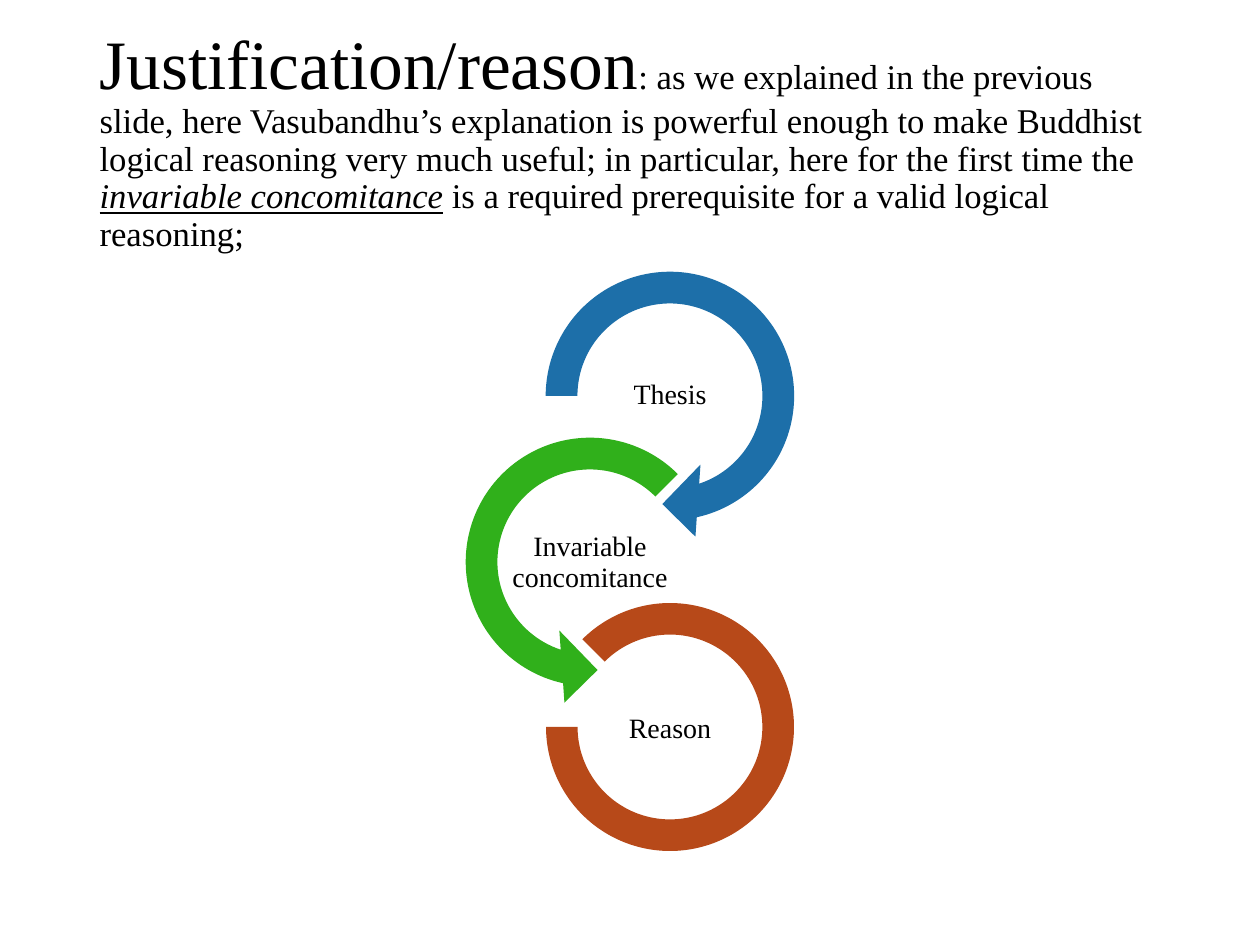
"""Build the slide on justification with its chain of three circular arrows."""
from pptx import Presentation
from pptx.dml.color import RGBColor
from pptx.enum.shapes import MSO_SHAPE
from pptx.enum.text import MSO_ANCHOR, MSO_AUTO_SIZE, PP_ALIGN
from pptx.util import Pt

PX = 914400 / 126
FONT = "Times New Roman"
COLORS = {"text": "000000", "blue": "1D6FA9", "green": "30B01B", "rust": "B74919"}
TITLE_BOX = (87, 50, 1086, 183)
TITLE_RUNS = [
    ("Justification/reason", 39.6, False),
    (": as we explained in the previous slide, here Vasubandhu’s explanation is "
     "powerful enough to make Buddhist logical reasoning very much useful; in "
     "particular, here for the first time the ", 19.8, False),
    ("invariable concomitance", 19.8, True),
    (" is a required prerequisite for a valid logical reasoning;", 19.8, False),
]
LABEL_SIZE = (160, 81)
STEPS = [
    ("Thesis", MSO_SHAPE.CIRCULAR_ARROW, "blue", (670, 396), 289, 395,
     (0.1098, 11.42, 45, 108, 0.125)),
    ("Invariable concomitance", MSO_SHAPE.LEFT_CIRCULAR_ARROW, "green", (590, 562), 289, 563,
     (0.1098, 11.42, 63, 189, 0.125)),
    ("Reason", MSO_SHAPE.BLOCK_ARC, "rust", (670, 727), 248, 729,
     (135, 108, 0.1274)),
]


def px(*lengths):
    return [round(length * PX) for length in lengths]


def color(name):
    return RGBColor.from_string(COLORS[name])


def centred(x, y, width, height):
    return px(x - width / 2, y - height / 2, width, height)


def style(run, size):
    run.font.name = FONT
    run.font.size = Pt(size)
    run.font.color.rgb = color("text")


def prepare(text_frame, alignment):
    text_frame.word_wrap = True
    text_frame.auto_size = MSO_AUTO_SIZE.NONE
    text_frame.vertical_anchor = MSO_ANCHOR.MIDDLE
    paragraph = text_frame.paragraphs[0]
    paragraph.alignment = alignment
    paragraph.line_spacing = 0.9
    return paragraph


def fill_title(title):
    title.left, title.top, title.width, title.height = px(*TITLE_BOX)
    paragraph = prepare(title.text_frame, PP_ALIGN.LEFT)
    for text, size, emphasis in TITLE_RUNS:
        run = paragraph.add_run()
        run.text = text
        style(run, size)
        if emphasis:
            run.font.italic = run.font.underline = True


def add_step(slide, label, kind, fill, centre, diameter, label_y, adjustments):
    ring = slide.shapes.add_shape(kind, *centred(*centre, diameter, diameter))
    for index, value in enumerate(adjustments):
        ring.adjustments[index] = value
    ring.shadow.inherit = False
    ring.fill.solid()
    ring.fill.fore_color.rgb = color(fill)
    ring.line.fill.background()

    box = slide.shapes.add_textbox(*centred(centre[0], label_y, *LABEL_SIZE))
    text_frame = box.text_frame
    text_frame.text = label
    text_frame.margin_left = text_frame.margin_right = px(1)[0]
    text_frame.margin_top = text_frame.margin_bottom = px(1)[0]
    paragraph = prepare(text_frame, PP_ALIGN.CENTER)
    style(paragraph.runs[0], 16)


def main():
    presentation = Presentation()
    presentation.slide_width, presentation.slide_height = px(1260, 945)
    slide = presentation.slides.add_slide(presentation.slide_layouts[5])
    fill_title(slide.shapes.title)
    for step in STEPS:
        add_step(slide, *step)
    presentation.save("out.pptx")


if __name__ == "__main__":
    main()
